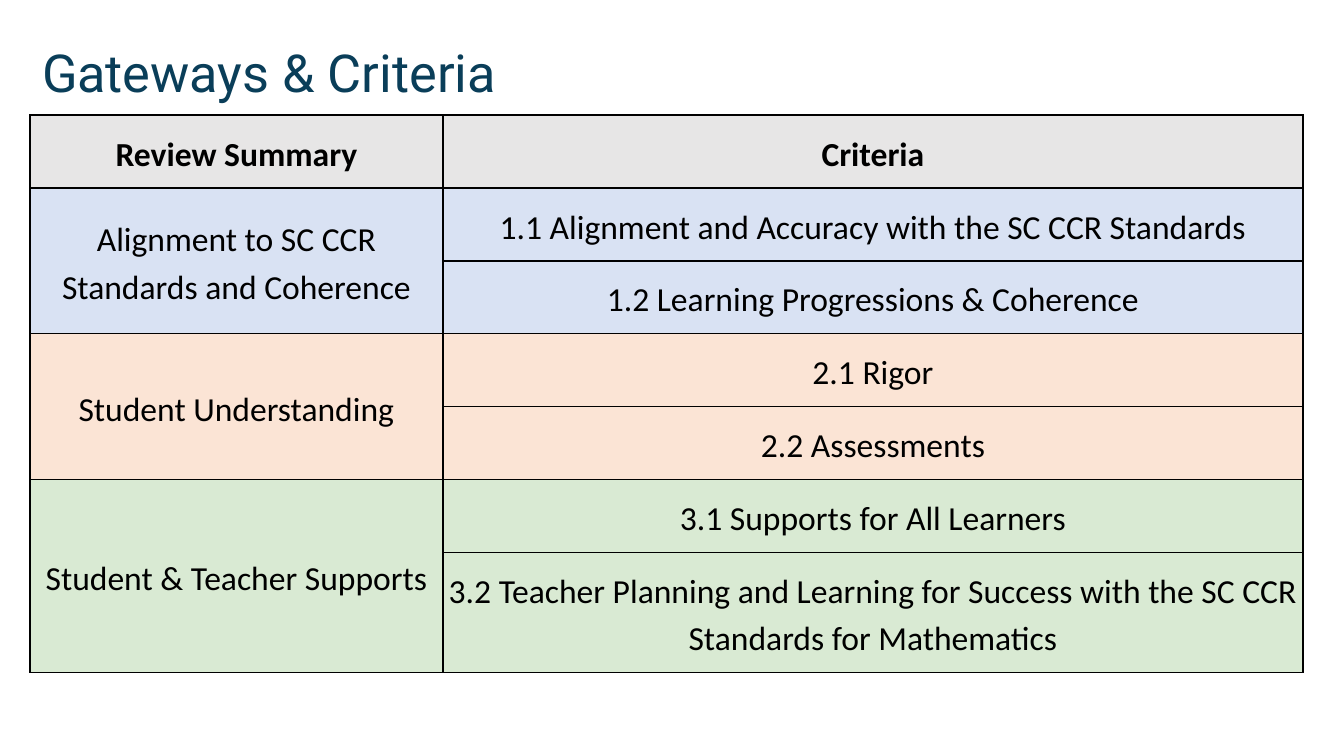
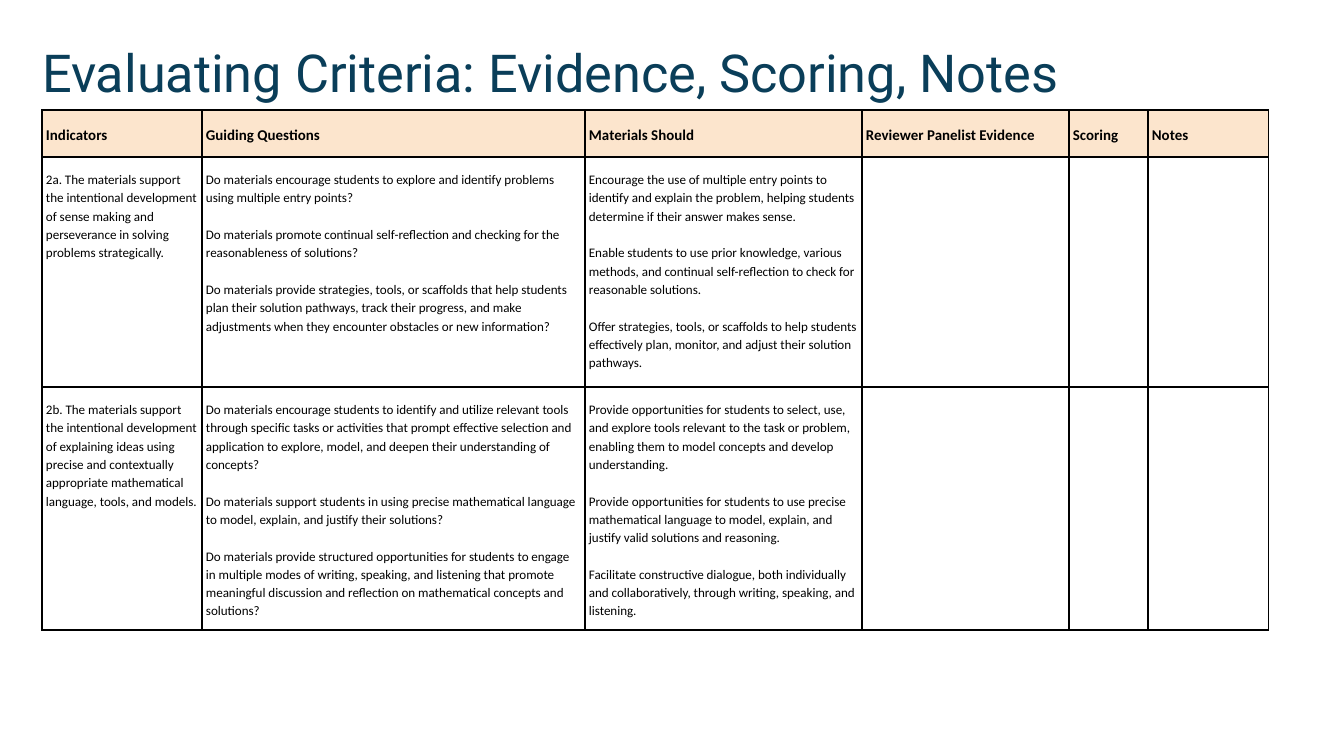
"""Build two slides on review gateways and evaluation criteria."""
from lxml import etree
from pptx import Presentation, util as u
from pptx.dml.color import RGBColor
from pptx.enum import text
from pptx.oxml import ns

EMU_PER_PX = 914400 / 134.4
BLANK_LAYOUT = 6

NAVY = RGBColor(0x0A, 0x3E, 0x59)
BLACK = RGBColor(0, 0, 0)
WHITE = RGBColor(255, 255, 255)
GREY = RGBColor(0xE7, 0xE6, 0xE6)
BLUE = RGBColor(0xD9, 0xE2, 0xF3)
PEACH = RGBColor(0xFB, 0xE4, 0xD5)
GREEN = RGBColor(0xD9, 0xEA, 0xD3)
SAND = RGBColor(0xFC, 0xE5, 0xCD)

GATEWAYS_TITLE = "Gateways & Criteria"
GATEWAYS_HEADER = ["Review Summary", "Criteria"]
GATEWAYS = [
    ("Alignment to SC CCR Standards and Coherence", BLUE, [
        "1.1 Alignment and Accuracy with the SC CCR Standards",
        "1.2 Learning Progressions & Coherence",
    ]),
    ("Student Understanding", PEACH, ["2.1 Rigor", "2.2 Assessments"]),
    ("Student & Teacher Supports", GREEN, [
        "3.1 Supports for All Learners",
        "3.2 Teacher Planning and Learning for Success with the SC CCR "
        "Standards for Mathematics",
    ]),
]

EVIDENCE_TITLE = "Evaluating Criteria: Evidence, Scoring, Notes"
EVIDENCE_HEADER = ["Indicators", "Guiding Questions", "Materials Should",
                   "Reviewer Panelist Evidence", "Scoring", "Notes"]
INDICATORS = [
    (
        ["2a. The materials support the intentional development of sense making "
         "and perseverance in solving problems strategically."],
        ["Do materials encourage students to explore and identify problems using "
         "multiple entry points?",
         "Do materials promote continual self-reflection and checking for the "
         "reasonableness of solutions?",
         "Do materials provide strategies, tools, or scaffolds that help students "
         "plan their solution pathways, track their progress, and make adjustments "
         "when they encounter obstacles or new information?"],
        ["Encourage the use of multiple entry points to identify and explain the "
         "problem, helping students determine if their answer makes sense.",
         "Enable students to use prior knowledge, various methods, and continual "
         "self-reflection to check for reasonable solutions.",
         "Offer strategies, tools, or scaffolds to help students effectively plan, "
         "monitor, and adjust their solution pathways."],
    ),
    (
        ["2b. The materials support the intentional development of explaining ideas "
         "using precise and contextually appropriate mathematical language, tools, "
         "and models."],
        ["Do materials encourage students to identify and utilize relevant tools "
         "through specific tasks or activities that prompt effective selection and "
         "application to explore, model, and deepen their understanding of concepts?",
         "Do materials support students in using precise mathematical language to "
         "model, explain, and justify their solutions?",
         "Do materials provide structured opportunities for students to engage in "
         "multiple modes of writing, speaking, and listening that promote meaningful "
         "discussion and reflection on mathematical concepts and solutions?"],
        ["Provide opportunities for students to select, use, and explore tools "
         "relevant to the task or problem, enabling them to model concepts and "
         "develop understanding.",
         "Provide opportunities for students to use precise mathematical language "
         "to model, explain, and justify valid solutions and reasoning.",
         "Facilitate constructive dialogue, both individually and collaboratively, "
         "through writing, speaking, and listening."],
    ),
]

TITLE_FONT = {"name": "Roboto", "size": u.Pt(28)}
GATEWAY_FONT = {"name": "Calibri", "size": u.Pt(18), "bold": False}
HEADER_FONT = {"name": "Calibri", "size": u.Pt(8), "bold": True}
INDICATOR_FONT = {"name": "Calibri", "size": u.Pt(7), "bold": False}
CENTERED = {"line_spacing": 1.15, "alignment": text.PP_ALIGN.CENTER}
LEFT = {"line_spacing": 1.15, "alignment": text.PP_ALIGN.LEFT}
QUESTION_GAP = u.Pt(9.8)


def px(length):
    return u.Emu(round(length * EMU_PER_PX))


def apply(target, values):
    for name, value in values.items():
        setattr(target, name, value)


def write(frame, lines, font, color, layout):
    for index, line in enumerate(lines):
        para = frame.add_paragraph() if index else frame.paragraphs[0]
        apply(para, layout)
        if index:
            para.space_before = QUESTION_GAP
        span = para.add_run()
        span.text = line
        apply(span.font, font)
        span.font.color.rgb = color


def add_page(deck, title):
    page = deck.slides.add_slide(deck.slide_layouts[BLANK_LAYOUT])
    box = page.shapes.add_textbox(px(42), px(40), px(1261), px(63))
    apply(box.text_frame, {"word_wrap": True, "margin_left": 0, "margin_top": 0,
                           "margin_right": 0, "margin_bottom": 0})
    write(box.text_frame, [title], TITLE_FONT, NAVY, {})
    return page


def add_grid(page, left, top, widths, heights):
    grid = page.shapes.add_table(len(heights), len(widths), px(left), px(top),
                                 px(sum(widths)), px(sum(heights))).table
    apply(grid, {"first_row": False, "horz_banding": False})
    for column, width in zip(grid.columns, widths):
        column.width = px(width)
    for row, height in zip(grid.rows, heights):
        row.height = px(height)
    return grid


def add_borders(cell):
    properties = cell._tc.get_or_add_tcPr()
    for side in ("lnL", "lnR", "lnT", "lnB"):
        line = etree.SubElement(properties, ns.qn(f"a:{side}"), w=str(u.Pt(0.75)))
        fill = etree.SubElement(line, ns.qn("a:solidFill"))
        etree.SubElement(fill, ns.qn("a:srgbClr"), val=str(BLACK))


def fill_cell(cell, lines, fill, font, layout, anchor):
    add_borders(cell)
    cell.fill.solid()
    cell.fill.fore_color.rgb = fill
    apply(cell, {"margin_left": px(4), "margin_right": px(4), "margin_top": px(13),
                 "margin_bottom": px(13), "vertical_anchor": anchor})
    write(cell.text_frame, lines, font, BLACK, layout)


def add_gateways(deck):
    page = add_page(deck, GATEWAYS_TITLE)
    grid = add_grid(page, 30, 115, [413, 860], [73] * 6 + [120])
    bottom, middle = text.MSO_ANCHOR.BOTTOM, text.MSO_ANCHOR.MIDDLE
    for column, label in enumerate(GATEWAYS_HEADER):
        fill_cell(grid.cell(0, column), [label], GREY,
                  {**GATEWAY_FONT, "bold": True}, CENTERED, bottom)
    row = 1
    for gateway, fill, criteria in GATEWAYS:
        grid.cell(row, 0).merge(grid.cell(row + len(criteria) - 1, 0))
        for index, criterion in enumerate(criteria):
            fill_cell(grid.cell(row, 0), [] if index else [gateway], fill,
                      GATEWAY_FONT, CENTERED, middle)
            fill_cell(grid.cell(row, 1), [criterion], fill,
                      GATEWAY_FONT, CENTERED, bottom)
            row += 1


def add_evidence(deck):
    page = add_page(deck, EVIDENCE_TITLE)
    grid = add_grid(page, 42, 110, [160, 383, 277, 207, 79, 121], [47, 230, 243])
    top = text.MSO_ANCHOR.TOP
    for column, label in enumerate(EVIDENCE_HEADER):
        fill_cell(grid.cell(0, column), [label], SAND, HEADER_FONT, LEFT, top)
        for row, indicator in enumerate(INDICATORS, 1):
            lines = indicator[column] if column < len(indicator) else []
            fill_cell(grid.cell(row, column), lines, WHITE,
                      INDICATOR_FONT, LEFT, top)


def main():
    deck = Presentation()
    apply(deck, {"slide_width": px(1344), "slide_height": px(756)})
    add_gateways(deck)
    add_evidence(deck)
    deck.save("out.pptx")


if __name__ == "__main__":
    main()
